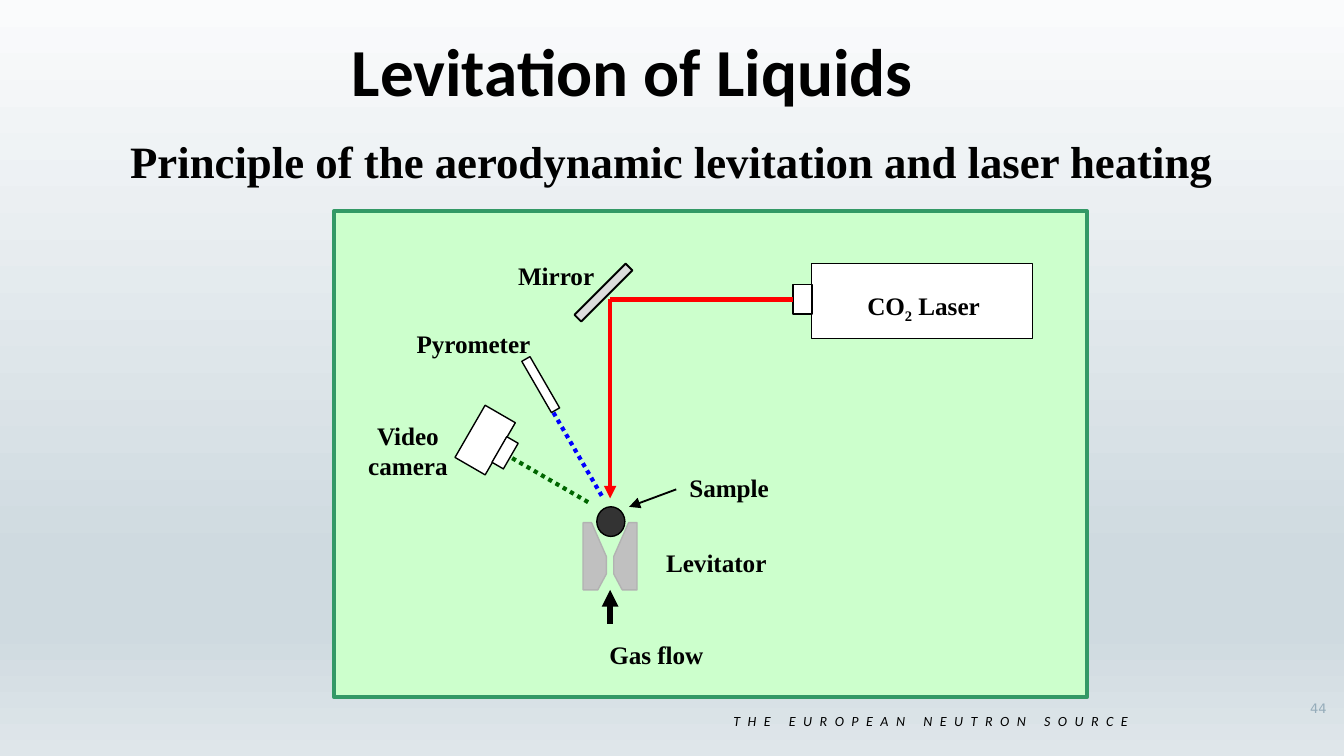
from lxml import etree
from pptx import Presentation as Deck
from pptx.dml.color import RGBColor as Rgb
from pptx.enum.dml import MSO_LINE as Dash
from pptx.enum.shapes import MSO_CONNECTOR as Link, MSO_SHAPE as Kind
from pptx.enum.text import MSO_ANCHOR as Anchor, PP_ALIGN as Align
from pptx.oxml.ns import qn
from pptx.util import Cm, Pt

BLACK = Rgb(0, 0, 0)
WHITE = Rgb(255, 255, 255)
MINT = Rgb(0xCC, 0xFF, 0xCC)
GREEN = Rgb(0x33, 0x99, 0x66)
DARK = Rgb(0x33, 0x33, 0x33)
PALE = Rgb(0xDD, 0xDD, 0xDD)
GREY = Rgb(0xC0, 0xC0, 0xC0)
EDGE = Rgb(0xB2, 0xB2, 0xB2)
RED = Rgb(255, 0, 0)
BLUE = Rgb(0, 0, 255)
MOSS = Rgb(0, 0x66, 0)
SLATE = Rgb(0x95, 0xAC, 0xBA)
SKY = [
    (0, Rgb(0xFA, 0xFB, 0xFC)),
    (74, Rgb(0xCF, 0xDA, 0xE0)),
    (83, Rgb(0xCF, 0xDA, 0xE0)),
    (100, Rgb(0xDF, 0xE6, 0xEA)),
]
AXIS = 11.53
BEAM = 5.66


def paint_sky(slide):
    fill = slide.background.fill
    fill.gradient()
    fill.gradient_angle = 270
    stops = slide.element.find(".//" + qn("a:gsLst"))
    for old in list(stops):
        stops.remove(old)
    for pos, color in SKY:
        stop = etree.SubElement(stops, qn("a:gs"), pos=str(pos * 1000))
        etree.SubElement(stop, qn("a:srgbClr"), val=str(color))


def write(slide, text, x, y, w, h, size=13.5, font="Times New Roman",
          color=BLACK, bold=True, italic=False, align=Align.LEFT,
          anchor=Anchor.TOP, wrap=True, side=0.25, gap=0):
    box = slide.shapes.add_textbox(Cm(x), Cm(y), Cm(w), Cm(h))
    frame = box.text_frame
    frame.word_wrap = wrap
    frame.vertical_anchor = anchor
    frame.margin_left = frame.margin_right = Cm(side)
    frame.margin_top = frame.margin_bottom = Cm(0.13)
    para = frame.paragraphs[0]
    para.alignment = align
    for i, part in enumerate(text.split("_")):
        run = para.add_run()
        run.text = part
        face = run.font
        face.name, face.size = font, Pt(size)
        face.bold, face.italic = bold, italic
        face.color.rgb = color
        props = run._r.get_or_add_rPr()
        if gap:
            props.set("spc", str(gap * 100))
        if i % 2:
            props.set("baseline", "-25000")
    return box


def style(shape, fill, edge, width):
    shape.shadow.inherit = False
    shape.fill.solid()
    shape.fill.fore_color.rgb = fill
    shape.line.color.rgb = edge
    shape.line.width = Pt(width)


def block(slide, x, y, w, h, fill=WHITE, edge=BLACK, width=0.75,
          turn=0, kind=Kind.RECTANGLE):
    shape = slide.shapes.add_shape(kind, Cm(x), Cm(y), Cm(w), Cm(h))
    style(shape, fill, edge, width)
    shape.rotation = turn
    return shape


def ray(slide, start, end, color, width, dash=None, arrow=False):
    spots = [Cm(v) for v in (*start, *end)]
    line = slide.shapes.add_connector(Link.STRAIGHT, *spots)
    line.line.color.rgb = color
    line.line.width = Pt(width)
    if dash:
        line.line.dash_style = dash
    if arrow:
        etree.SubElement(line.line._get_or_add_ln(), qn("a:tailEnd"),
                         type="triangle")
    etree.SubElement(line._element.spPr, qn("a:effectLst"))
    return line


def jaw(slide, side):
    rim = [(0.51, 11.15), (0.51, 9.88), (0.35, 9.88),
           (0.07, 10.52), (0.07, 10.85), (0.23, 11.15)]
    spots = [(Cm(AXIS + side * dx), Cm(y)) for dx, y in rim]
    path = slide.shapes.build_freeform(*spots[0], scale=1.0)
    path.add_line_segments(spots[1:], close=True)
    style(path.convert_to_shape(), GREY, EDGE, 0.75)


def add_heads(slide):
    write(slide, "44", 24.51, 13.11, 1.19, 0.56, size=7,
          font="DejaVu Sans", color=SLATE, bold=False, anchor=Anchor.MIDDLE)
    write(slide, "THE EUROPEAN NEUTRON SOURCE", 12.95, 13.34, 9.27, 0.58,
          size=7.5, font="Calibri", bold=False, italic=True,
          align=Align.CENTER, anchor=Anchor.MIDDLE, gap=4)
    write(slide, "Levitation of Liquids", 6.4, 0.43, 11.4, 1.68,
          size=36, font="Calibri")
    write(slide, "Principle of the aerodynamic levitation and laser heating",
          2.21, 2.39, 21.16, 1.27, size=24, wrap=False)


def add_optics(slide):
    block(slide, 10.13, 6.71, 0.18, 1.12, turn=330)
    ray(slide, (10.46, 7.8), (11.4, 9.42), BLUE, 2.25, Dash.ROUND_DOT)
    block(slide, 8.84, 7.75, 0.66, 1.14, turn=30)
    block(slide, 9.42, 8.28, 0.25, 0.56, turn=30)
    ray(slide, (9.68, 8.66), (11.18, 9.53), MOSS, 2.25, Dash.ROUND_DOT)
    block(slide, 10.72, 5.44, 1.37, 0.18, fill=PALE, width=1, turn=315)
    block(slide, 15.34, 4.98, 4.17, 1.42)
    port = block(slide, 14.99, 5.38, 0.36, 0.56)
    ray(slide, (AXIS, BEAM), (AXIS, 9.42), RED, 2.25, arrow=True)
    beam = ray(slide, (14.99, BEAM), (AXIS, BEAM), RED, 2.25)
    beam.begin_connect(port, 1)


def add_holder(slide):
    block(slide, 11.28, 9.58, 0.53, 0.56, fill=DARK, kind=Kind.OVAL)
    ray(slide, (AXIS, 11.79), (AXIS, 11.15), BLACK, 3, arrow=True)
    ray(slide, (12.78, 9.25), (11.89, 9.58), BLACK, 1, arrow=True)
    for side in (-1, 1):
        jaw(slide, side)


def add_labels(slide):
    mid = Align.CENTER
    write(slide, "Pyrometer", 7.49, 6.07, 2.92, 0.61, align=mid)
    write(slide, "Video camera", 6.91, 7.82, 1.6, 1.47, align=mid, side=0)
    write(slide, "Mirror", 9.27, 4.8, 2.21, 0.61, align=Align.RIGHT)
    write(slide, "Sample", 12.78, 8.79, 2.79, 0.61)
    write(slide, "Levitator", 12.34, 10.21, 2.54, 0.71)
    write(slide, "Gas flow", 10.87, 11.96, 3.07, 0.69, align=mid)
    name = write(slide, "CO_2_ Laser", 16.21, 5.36, 2.49, 0.64,
                 align=mid, side=0)
    name.fill.solid()
    name.fill.fore_color.rgb = WHITE


def main():
    deck = Deck()
    deck.slide_width, deck.slide_height = Cm(25.4), Cm(14.29)
    slide = deck.slides.add_slide(deck.slide_layouts[6])
    paint_sky(slide)
    add_heads(slide)
    block(slide, 6.32, 3.99, 14.22, 9.19, fill=MINT, edge=GREEN, width=2.25)
    add_optics(slide)
    add_holder(slide)
    add_labels(slide)
    deck.save("out.pptx")


if __name__ == "__main__":
    main()
